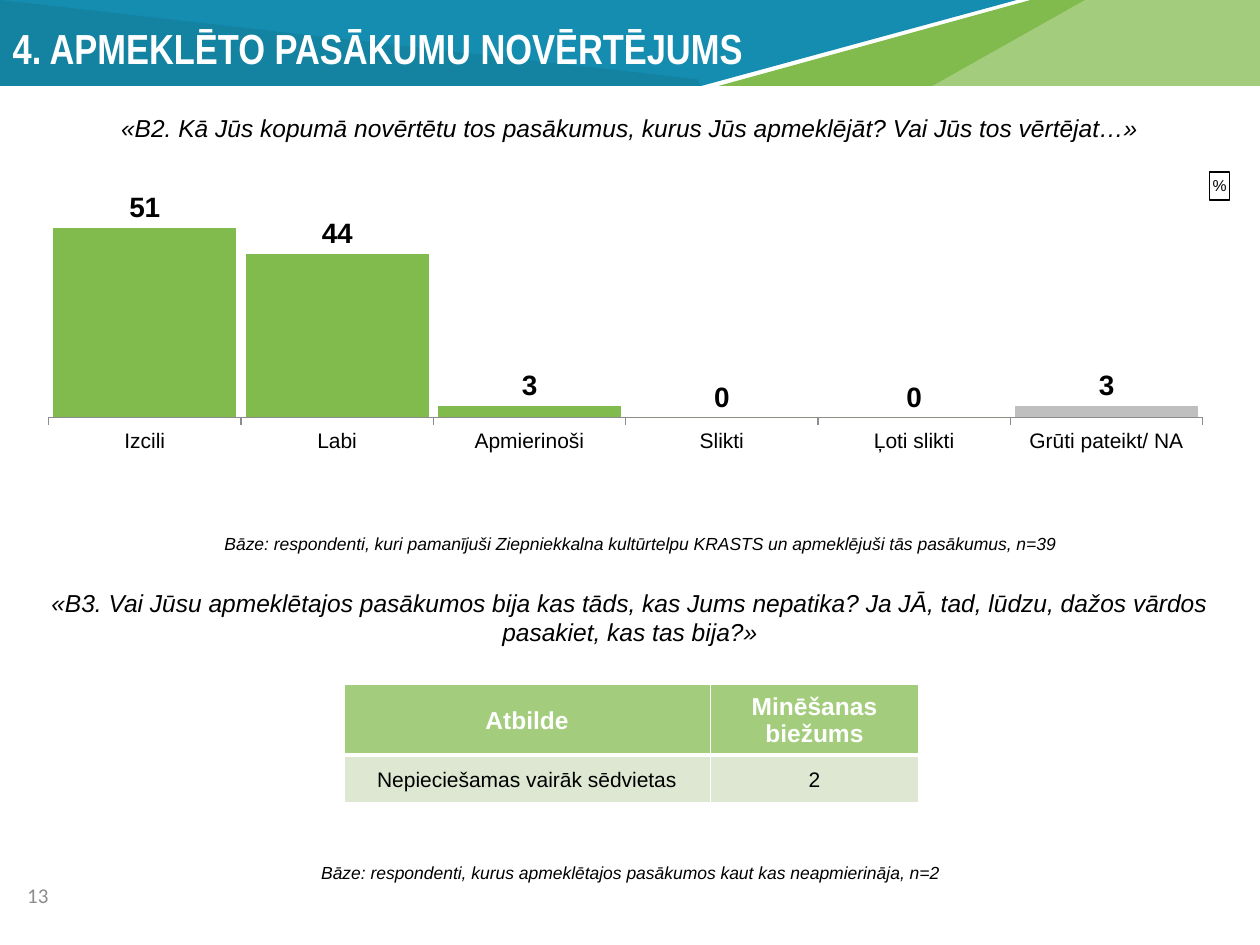
from lxml.etree import SubElement as Sub
from pptx import Presentation
from pptx.chart.data import CategoryChartData as Data
from pptx.dml.color import RGBColor as RGB
from pptx.enum.chart import XL_CHART_TYPE as Kind
from pptx.enum.chart import XL_LABEL_POSITION as Pos
from pptx.enum.chart import XL_TICK_MARK as Tick
from pptx.enum.text import MSO_ANCHOR as Anchor
from pptx.enum.text import PP_ALIGN as Align
from pptx.oxml import parse_xml
from pptx.oxml.ns import nsdecls, qn
from pptx.util import Cm, Pt

BLACK = RGB(0, 0, 0)
WHITE = RGB(0xFF, 0xFF, 0xFF)
BLUE = RGB(0x15, 0x8D, 0xB0)
TEAL = RGB(0x13, 0x83, 0xA1)
GREEN = RGB(0x81, 0xBB, 0x4D)
LIGHT = RGB(0xA3, 0xCD, 0x7D)
PALE = RGB(0xDE, 0xE7, 0xD1)
SILVER = RGB(0xBF, 0xBF, 0xBF)
GREY = RGB(0x8C, 0x8C, 0x8C)


def style(font, size, color=BLACK, bold=False, italic=False, name="Arial"):
    font.name, font.size = name, Pt(size)
    font.bold, font.italic = bold, italic
    font.color.rgb = color


def write(frame, text, align=Align.CENTER, **form):
    para = frame.paragraphs[0]
    para.alignment = align
    run = para.add_run()
    run.text = text
    style(run.font, **form)


def place(parent, **spots):
    """Set a manual chart layout, as fractions of the chart area."""
    for old in parent.findall(qn("c:layout")):
        parent.remove(old)
    layout = parse_xml(f"<c:layout {nsdecls('c')}/>")
    manual = Sub(layout, qn("c:manualLayout"))
    if "w" in spots:
        Sub(manual, qn("c:layoutTarget"), val="inner")
    for key in spots:
        Sub(manual, qn(f"c:{key}Mode"), val="edge")
    for key, val in spots.items():
        Sub(manual, qn(f"c:{key}"), val=str(val))
    # A title holds its text first, a plot area starts with its layout
    text = parent.find(qn("c:tx"))
    parent.insert(0 if text is None else 1, layout)


class Page:
    def __init__(self, deck):
        self.slide = deck.slides.add_slide(deck.slide_layouts[5])
        self.shapes = self.slide.shapes

    def wedge(self, color, first, *rest):
        pen = self.shapes.build_freeform(*map(Cm, first))
        pen.add_line_segments([(Cm(x), Cm(y)) for x, y in rest])
        shape = pen.convert_to_shape()
        shape.shadow.inherit = False
        shape.fill.solid()
        shape.fill.fore_color.rgb = color
        shape.line.fill.background()

    def title(self, text, x, y, w, h):
        head = self.shapes.title
        head.left, head.top, head.width, head.height = map(Cm, (x, y, w, h))
        head.text_frame.vertical_anchor = Anchor.TOP
        write(head.text_frame, text, align=Align.LEFT, size=24, color=WHITE,
              bold=True, name="Arial Narrow")
        # Bring it in front of the banner
        self.shapes._spTree.append(head._element)

    def note(self, text, y, x=0, w=25.4, h=1.19, **form):
        frame = self.shapes.add_textbox(*map(Cm, (x, y, w, h))).text_frame
        frame.word_wrap = True
        frame.vertical_anchor = Anchor.MIDDLE
        write(frame, text, **form)

    def chart(self, cats, vals, x, y, w, h):
        data = Data(number_format="###0")
        data.categories = cats
        data.add_series("Series 1", vals)
        chart = self.shapes.add_chart(
            Kind.COLUMN_CLUSTERED, *map(Cm, (x, y, w, h)), data).chart
        style(chart.font, 9)
        chart.has_legend = False

        # Boxed unit in the corner
        unit = chart.chart_title
        write(unit.text_frame, "%", size=9)
        unit.format.line.color.rgb = BLACK
        unit.format.line.width = Pt(0.75)
        place(unit._element, x=0.966, y=0.045)
        place(chart._chartSpace.chart.plotArea, x=0.007, y=0.1, w=0.96, h=0.648)

        # Axes
        base, scale = chart.category_axis, chart.value_axis
        style(base.tick_labels.font, 12)
        base.major_tick_mark = Tick.OUTSIDE
        base.format.line.color.rgb = GREY
        scale.has_major_gridlines = False
        scale.minimum_scale, scale.maximum_scale = 0, 60
        scale.visible = False

        # Columns, the last one in grey
        plot = chart.plots[0]
        plot.gap_width = 5
        plot.vary_by_categories = False
        bars = plot.series[0]
        last = bars.points[len(cats) - 1]
        for part, color in ((bars, GREEN), (last, SILVER)):
            part.format.fill.solid()
            part.format.fill.fore_color.rgb = color
        tags = bars.data_labels
        tags.show_value = True
        tags.position = Pos.OUTSIDE_END
        tags.number_format, tags.number_format_is_linked = "###0", False
        style(tags.font, 16, bold=True)

    def table(self, rows, x, y, wide, high):
        grid = self.shapes.add_table(
            len(high), len(wide), Cm(x), Cm(y), Cm(sum(wide)), Cm(sum(high))).table
        for lines, sizes, side in ((grid.columns, wide, "width"),
                                   (grid.rows, high, "height")):
            for line, size in zip(lines, sizes):
                setattr(line, side, Cm(size))
        for r, row in enumerate(rows):
            for c, text in enumerate(row):
                self.cell(grid.cell(r, c), text, head=r == 0)

    def cell(self, cell, text, head):
        cell.fill.solid()
        cell.fill.fore_color.rgb = LIGHT if head else PALE
        cell.vertical_anchor = Anchor.MIDDLE
        cell.margin_left = cell.margin_right = cell.margin_top = Cm(0.03)
        cell.margin_bottom = 0
        write(cell.text_frame, text, size=14 if head else 12,
              color=WHITE if head else BLACK, bold=head)
        # White rules, with a thick one between head and body
        thick = "B" if head else "T"
        for i, side in enumerate("LRTB"):
            width = Pt(3 if side == thick else 1)
            cell._tc.get_or_add_tcPr().insert(i, parse_xml(
                f'<a:ln{side} {nsdecls("a")} w="{width}"><a:solidFill>'
                f'<a:srgbClr val="{WHITE}"/></a:solidFill></a:ln{side}>'))


def main():
    deck = Presentation()
    deck.slide_width, deck.slide_height = Cm(25.4), Cm(19.05)
    page = Page(deck)

    # Banner
    low = 1.73
    page.wedge(BLUE, (0, 0), (20.5, 0), (14.15, low), (0, 1.65))
    page.wedge(TEAL, (0, 0), (14.07, 1.6), (14.1, low), (0, low))
    page.wedge(LIGHT, (14.53, low), (20.8, 0), (25.4, 0), (25.4, low))
    page.wedge(GREEN, (14.5, low), (20.78, 0), (21.87, 0), (18.8, low))
    page.title("4. APMEKLĒTO PASĀKUMU NOVĒRTĒJUMS", 0, 0.33, 21.08, 1.9)

    # Rating question
    ask = dict(size=14, italic=True)
    base = dict(size=10, italic=True)
    page.note("«B2. Kā Jūs kopumā novērtētu tos pasākumus, kurus Jūs "
              "apmeklējāt? Vai Jūs tos vērtējat…»", 1.98, **ask)
    page.chart(["Izcili", "Labi", "Apmierinoši", "Slikti", "Ļoti slikti",
                "Grūti pateikt/ NA"], [51, 44, 3, 0, 0, 3],
               0.81, 3.1, 24.41, 8.2)
    page.note("Bāze: respondenti, kuri pamanījuši Ziepniekkalna kultūrtelpu "
              "KRASTS un apmeklējuši tās pasākumus, n=39", 10.36, x=0.2, **base)

    # Dislikes question
    page.note("«B3. Vai Jūsu apmeklētajos pasākumos bija kas tāds, kas Jums "
              "nepatika? Ja JĀ, tad, lūdzu, dažos vārdos pasakiet, kas tas "
              "bija?»", 11.85, **ask)
    page.table([("Atbilde", "Minēšanas biežums"),
                ("Nepieciešamas vairāk sēdvietas", "2")],
               6.93, 13.8, (7.39, 4.2), (1.42, 0.97))
    page.note("Bāze: respondenti, kurus apmeklētajos pasākumos kaut kas "
              "neapmierināja, n=2", 17, **base)

    # Page number
    page.note("13", 17.53, x=0.3, w=2.7, h=1.02, align=Align.LEFT,
              size=12, color=GREY, name="Calibri")
    deck.save("out.pptx")


if __name__ == "__main__":
    main()
